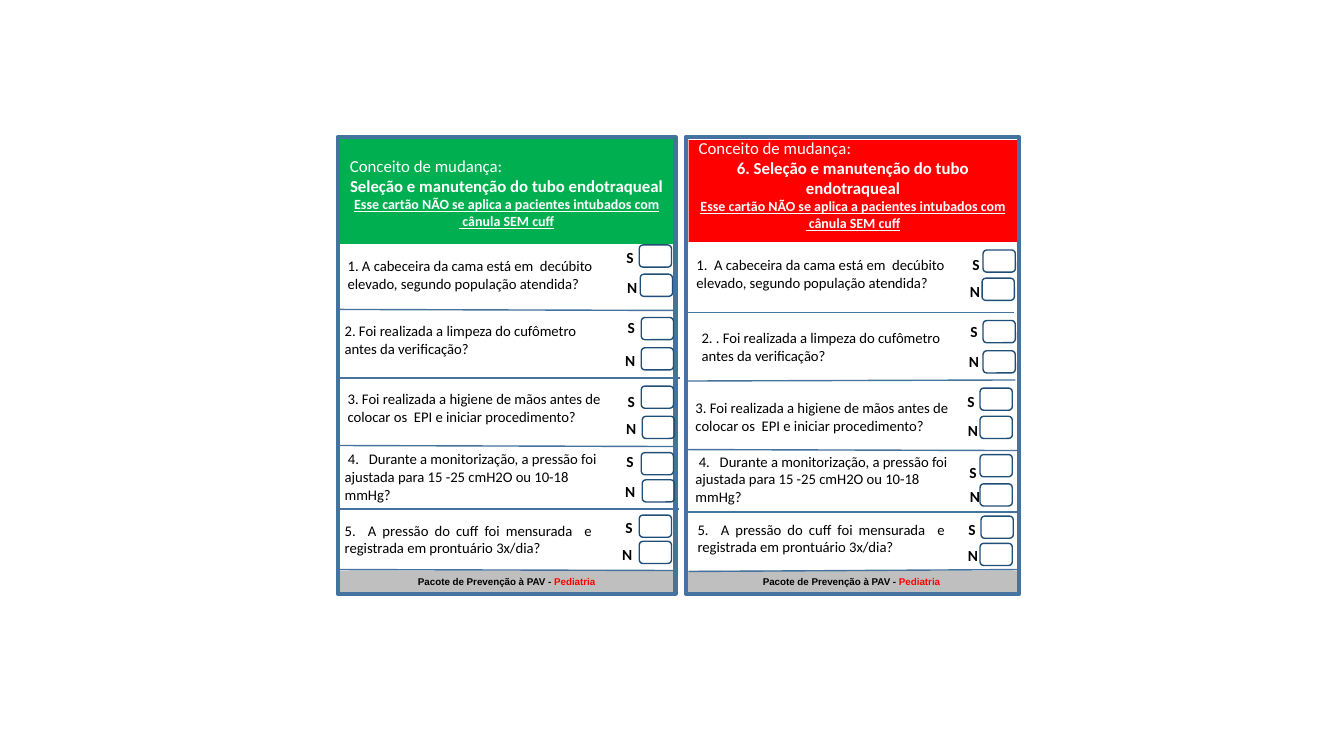
from lxml import etree
from pptx import Presentation
from pptx.dml.color import RGBColor
from pptx.enum.shapes import MSO_CONNECTOR, MSO_SHAPE
from pptx.enum.text import MSO_ANCHOR, MSO_AUTO_SIZE, PP_ALIGN
from pptx.oxml.ns import qn
from pptx.util import Inches, Pt

RECT, ROUND = MSO_SHAPE.RECTANGLE, MSO_SHAPE.ROUNDED_RECTANGLE
STRAIGHT = MSO_CONNECTOR.STRAIGHT
LEFT, CENTER, JUSTIFY = PP_ALIGN.LEFT, PP_ALIGN.CENTER, PP_ALIGN.JUSTIFY
MIDDLE, NO_FIT = MSO_ANCHOR.MIDDLE, MSO_AUTO_SIZE.NONE

BLACK, WHITE = RGBColor(0, 0, 0), RGBColor(0xFF, 0xFF, 0xFF)
RED, GREEN = RGBColor(0xFF, 0, 0), RGBColor(0, 0xB0, 0x50)
GRAY = RGBColor(0xBF, 0xBF, 0xBF)
BLUE, NAVY = RGBColor(0x43, 0x73, 0x9E), RGBColor(0x1F, 0x4E, 0x79)

CELL = Inches(0.1)  # every column and row of the grid
COMPARISON = 4      # layout with two card headings

# Question width, height and alignment, shared by both cards
QUESTION_SIZES = [(28, 5.5, LEFT), (28, 5, LEFT), (27.3, 4.9, LEFT),
                  (28, 5, LEFT), (26.5, 5, JUSTIFY)]
Q3 = "3. Foi realizada a higiene de mãos antes de colocar os  EPI e iniciar procedimento?"
Q4 = " 4.   Durante a monitorização, a pressão foi   ajustada para 15 -25 cmH2O ou 10-18 mmHg?"
Q5 = "5.  A pressão do cuff foi mensurada  e registrada em prontuário 3x/dia? "

# rows: question, its corner, corners of S box, N box, S label, N label
# dividers: start column, start row, end column, end row
CARDS = [
    dict(
        heading_index=1, heading_box=(33.7, 13.6, 33.1, 10.6), color=GREEN,
        heading="Seleção e manutenção do tubo endotraqueal", insets=(0.4, 0),
        frame=(33.5, 13.6, 33.5, 45.3), footer=(33.7, 56.6, 33.1, 2.2),
        rows=[
            ("1. A cabeceira da cama está em  decúbito elevado, segundo população atendida?",
             (33.5, 24.5), (63.4, 24.3), (63.5, 27.2), (61.3, 24.7), (61.5, 27.8)),
            ("2. Foi realizada a limpeza do cufômetro antes da verificação?",
             (33.2, 31.2), (63.6, 31.5), (63.6, 34.5), (61.4, 31.6), (61.3, 35.1)),
            (Q3, (33.5, 38), (63.6, 38.3), (63.7, 41.3), (61.4, 39), (61.4, 41.8)),
            (Q4, (33.2, 44.8), (63.6, 44.9), (63.7, 47.6), (61.3, 44.9), (61.3, 48)),
            (Q5, (33.2, 51), (63.4, 51.1), (63.4, 53.7), (61.2, 51.5), (61, 54.3)),
        ],
        dividers=[(33.4, 30.7, 67.2, 30.8), (33.5, 37.5, 67.4, 37.5),
                  (33.4, 44.2, 67.2, 44.3), (33.4, 50.5, 67.3, 50.5),
                  (33.4, 56.5, 67.2, 56.6)]),
    dict(
        heading_index=3, heading_box=(68.3, 13.9, 32.6, 10.1), color=RED,
        heading="6. Seleção e manutenção do tubo endotraqueal", insets=(0, 1.3),
        frame=(68, 13.6, 33.1, 45.3), footer=(67.9, 56.6, 33.1, 2.2),
        rows=[
            ("1.  A cabeceira da cama está em  decúbito elevado, segundo população atendida?",
             (68.1, 24.4), (97.5, 24.8), (97.4, 27.6), (95.6, 25.4), (95.5, 28.2)),
            ("2. . Foi realizada a limpeza do cufômetro antes da verificação?",
             (68.6, 31.9), (97.5, 31.8), (97.5, 34.8), (95.4, 32), (95.4, 35.2)),
            (Q3, (68, 38.9), (97.2, 38.5), (97.2, 41.3), (95.1, 39), (95.3, 42)),
            (Q4, (68, 45), (97.2, 45.1), (97.2, 48), (95.3, 46), (95.5, 48.5)),
            (Q5, (68.2, 50.9), (97.3, 51.2), (97.2, 53.9), (95.2, 51.7), (95.3, 54.4)),
        ],
        dividers=[(68.2, 31, 100.6, 31), (67.9, 37.8, 100.7, 37.7),
                  (68.2, 44.6, 100.9, 44.7), (67.9, 50.8, 101, 50.8),
                  (68.3, 56.7, 101.1, 56.5)]),
]


def grid(*cells):
    return [round(c * CELL) for c in cells]


class CardSlide:
    def __init__(self, s):
        self.s = s

    def fill_text(self, sp, paragraphs, insets=(1, 0, 1, 0)):
        """Each paragraph is (alignment, runs); a run is (text, style)."""
        tf = sp.text_frame
        tf.word_wrap, tf.auto_size, tf.vertical_anchor = True, NO_FIT, MIDDLE
        (tf.margin_left, tf.margin_top,
         tf.margin_right, tf.margin_bottom) = grid(*insets)
        tf.text = "\n".join("" for _ in paragraphs)
        for p, (align, runs) in zip(tf.paragraphs, paragraphs):
            p.alignment, p.space_before, p.line_spacing = align, Pt(0), 1.0
            for text, style in runs:
                r = p.add_run()
                r.text = text
                size, color, bold, underline, font = style
                r.font.size, r.font.name = Pt(size), font
                r.font.bold, r.font.underline = bold, underline
                r.font.color.rgb = color

    def shape(self, kind, box, fill=None, line=None, width=1):
        sp = self.s.shapes.add_shape(kind, *grid(*box))
        sp.shadow.inherit = False
        if fill is None:
            sp.fill.background()
        else:
            sp.fill.solid()
            sp.fill.fore_color.rgb = fill
        if line is None:
            sp.line.fill.background()
        else:
            sp.line.color.rgb, sp.line.width = line, Pt(width)
        return sp

    def heading(self, index, box, color, title, insets):
        sp = self.s.placeholders[index]
        sp.left, sp.top, sp.width, sp.height = grid(*box)
        sp.fill.solid()
        sp.fill.fore_color.rgb = color
        plain = (12, WHITE, False, False, "Calibri")
        bold = (12, WHITE, True, False, "Calibri")
        notice = (10, WHITE, True, True, "Calibri")
        top, bottom = insets
        self.fill_text(sp, [
            (LEFT, [("Conceito de mudança:", plain)]),
            (CENTER, [(title, bold)]),
            (CENTER, [("Esse cartão NÃO se aplica a pacientes intubados com", notice)]),
            (CENTER, [(" cânula SEM cuff", notice)]),
        ], (1, top, 1, bottom))

    def footer(self, box):
        sp = self.shape(RECT, box, fill=GRAY)
        self.fill_text(sp, [(CENTER, [
            ("Pacote de Prevenção à PAV - ", (7, BLACK, True, False, "Arial")),
            ("Pediatria", (7, RED, True, False, "Arial"))])])

    def text(self, box, text, align, size, bold=False, inset=1):
        sp = self.s.shapes.add_textbox(*grid(*box))
        style = (size, BLACK, bold, False, "Calibri")
        self.fill_text(sp, [(align, [(text, style)])], (inset, 0, inset, 0))

    def answer(self, letter, box_corner, label_corner, label_height):
        self.shape(ROUND, (*box_corner, 3.2, 2.2), line=NAVY)
        self.text((*label_corner, 2.4, label_height), letter, CENTER, 11, True, 0)

    def divider(self, ends):
        c = self.s.shapes.add_connector(STRAIGHT, *grid(*ends))
        c.line.color.rgb, c.line.width = BLUE, Pt(1)
        etree.SubElement(c._element.spPr, qn("a:effectLst"))


def main():
    prs = Presentation()
    prs.slide_width, prs.slide_height = Inches(13.33), Inches(7.5)
    s = prs.slides.add_slide(prs.slide_layouts[COMPARISON])
    slide = CardSlide(s)

    for card in CARDS:
        # Heading, footer and frame
        slide.heading(card["heading_index"], card["heading_box"], card["color"],
                      card["heading"], card["insets"])
        slide.footer(card["footer"])
        slide.shape(RECT, card["frame"], line=BLUE, width=3)

        # Row dividers
        for ends in card["dividers"]:
            slide.divider(ends)

        # Questions with yes and no boxes
        for row, (width, height, align) in zip(card["rows"], QUESTION_SIZES):
            question, corner, yes_box, no_box, yes_label, no_label = row
            slide.text((*corner, width, height), question, align, 10.5)
            slide.answer("S", yes_box, yes_label, 1.7)
            slide.answer("N", no_box, no_label, 1.4)

    # Unused placeholders
    for sp in list(s.placeholders):
        if not sp.text_frame.text:
            sp._element.getparent().remove(sp._element)

    prs.save("out.pptx")


if __name__ == "__main__":
    main()
